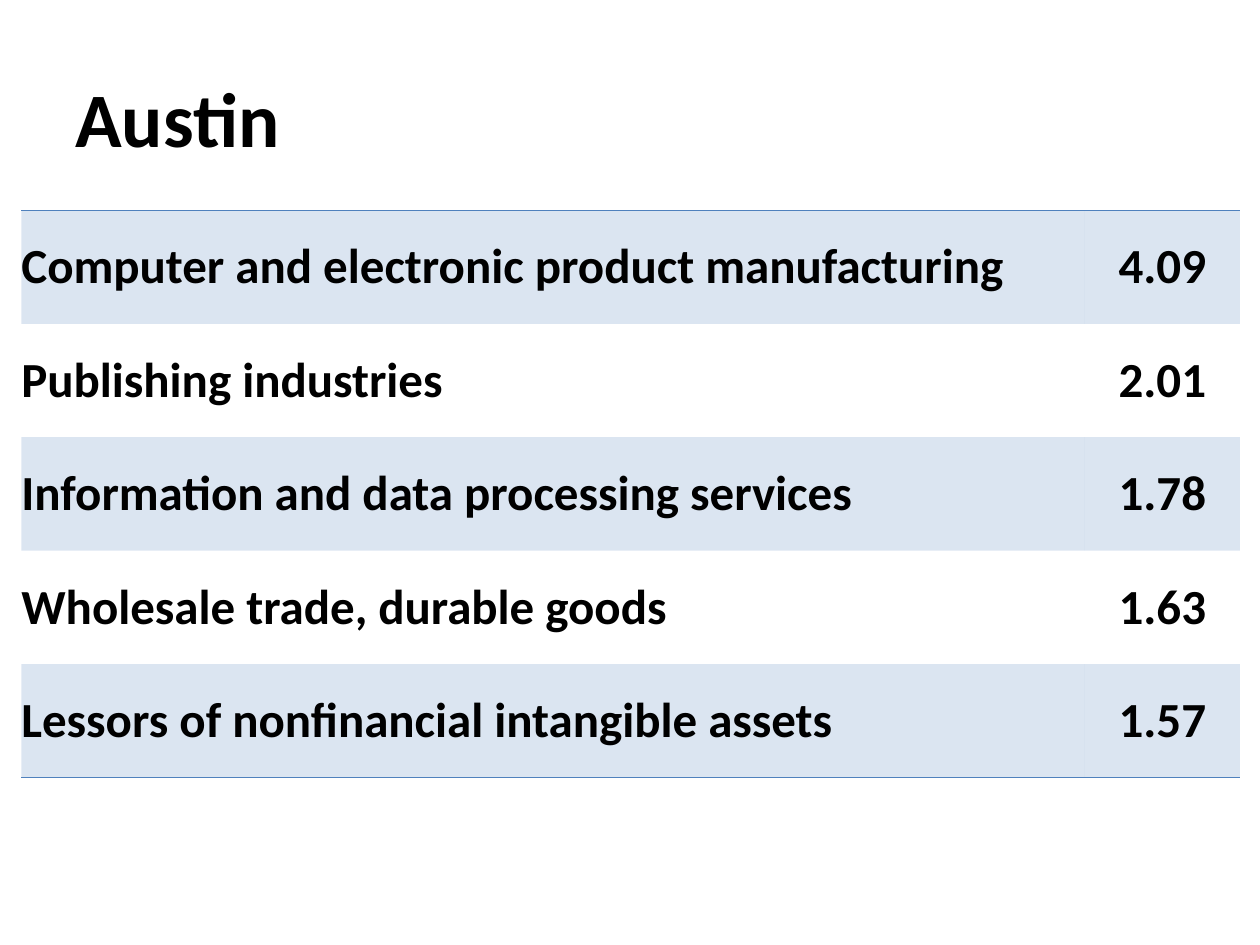
from lxml import etree
from pptx import Presentation
from pptx.dml.color import RGBColor
from pptx.enum import text
from pptx.oxml import ns
from pptx.util import Inches, Pt

BLACK = RGBColor(0x00, 0x00, 0x00)
BLUE = RGBColor(0x4F, 0x81, 0xBD)
FONT = "Calibri"
PLAIN_STYLE = "{2D5ABB26-0587-4C30-8999-92F81FD0307C}"
COLUMN_WIDTHS = (8.44, 1.23)
ROW_HEIGHT = 0.9
INDUSTRIES = [
    ("Computer and electronic product manufacturing", "4.09"),
    ("Publishing industries", "2.01"),
    ("Information and data processing services", "1.78"),
    ("Wholesale trade, durable goods", "1.63"),
    ("Lessors of nonfinancial intangible assets", "1.57"),
]


def write(paragraph, words, size, align):
    paragraph.text = words
    paragraph.alignment = align
    font = paragraph.font
    font.name, font.size, font.bold = FONT, Pt(size), True
    font.color.rgb = BLACK


def add_title(slide, words):
    box = slide.shapes.add_textbox(Inches(0.5), Inches(0.3), Inches(9), Inches(1.25))
    frame = box.text_frame
    frame.word_wrap = True
    frame.vertical_anchor = text.MSO_ANCHOR.MIDDLE
    write(frame.paragraphs[0], words, 44, text.PP_ALIGN.LEFT)


def tint(cell, color, percent):
    cell.fill.solid()
    cell.fill.fore_color.rgb = color
    shade = cell._tc.tcPr.find(".//" + ns.qn("a:srgbClr"))
    etree.SubElement(shade, ns.qn("a:alpha"), val=str(percent * 1000))


def add_border(cell, side, color):
    line = etree.Element(ns.qn(f"a:ln{side}"), w=str(Pt(1)))
    fill = etree.SubElement(line, ns.qn("a:solidFill"))
    etree.SubElement(fill, ns.qn("a:srgbClr"), val=str(color))
    cell._tc.get_or_add_tcPr().insert(0, line)


def fill_cell(cell, words, align):
    cell.margin_left = cell.margin_right = cell.margin_top = cell.margin_bottom = 0
    cell.vertical_anchor = text.MSO_ANCHOR.MIDDLE
    write(cell.text_frame.paragraphs[0], words, 28, align)


def add_industry_table(slide, rows):
    frame = slide.shapes.add_table(
        len(rows), len(COLUMN_WIDTHS), Inches(0.17), Inches(1.67),
        Inches(sum(COLUMN_WIDTHS)), Inches(ROW_HEIGHT * len(rows)))
    table = frame.table
    table.first_row = table.horz_banding = False
    table._tbl.tblPr.find(ns.qn("a:tableStyleId")).text = PLAIN_STYLE
    for column, width in zip(table.columns, COLUMN_WIDTHS):
        column.width = Inches(width)
    aligns = (text.PP_ALIGN.LEFT, text.PP_ALIGN.CENTER)
    for index, values in enumerate(rows):
        table.rows[index].height = Inches(ROW_HEIGHT)
        for cell, words, align in zip(table.rows[index].cells, values, aligns):
            fill_cell(cell, words, align)
            if index % 2 == 0:
                tint(cell, BLUE, 20)
            else:
                cell.fill.background()
            if index == 0:
                add_border(cell, "T", BLUE)
            if index == len(rows) - 1:
                add_border(cell, "B", BLUE)


def main():
    deck = Presentation()
    deck.slide_width, deck.slide_height = Inches(10), Inches(7.5)
    slide = deck.slides.add_slide(deck.slide_layouts[6])
    add_title(slide, "Austin")
    add_industry_table(slide, INDUSTRIES)
    deck.save("out.pptx")


if __name__ == "__main__":
    main()
